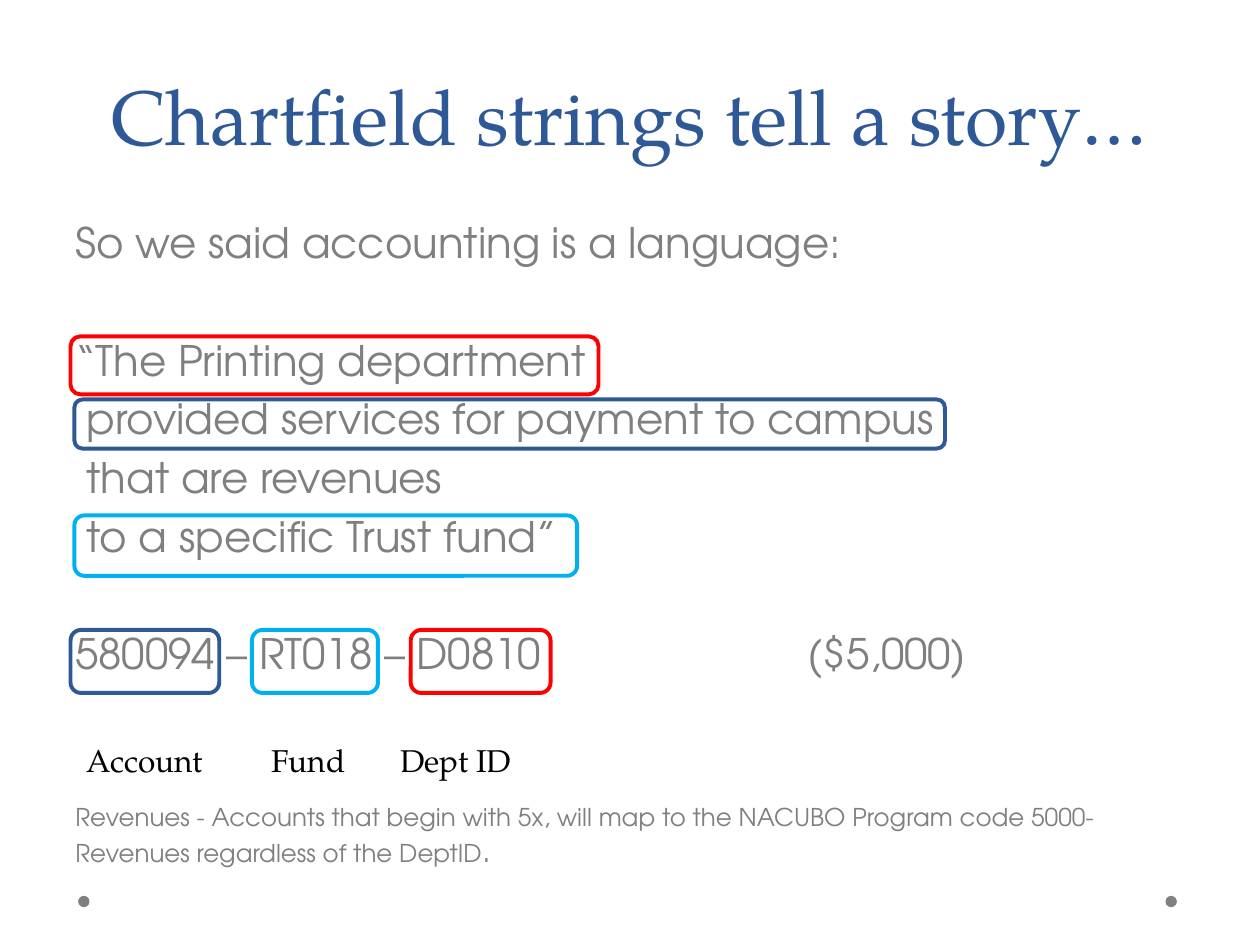
from pptx import Presentation
from pptx.dml.color import RGBColor as RGB
from pptx.enum.shapes import MSO_SHAPE as Shape
from pptx.enum.text import MSO_ANCHOR as Anchor, PP_ALIGN as Align
from pptx.oxml.ns import qn
from pptx.util import Inches, Pt
from lxml.etree import SubElement

COLORS = {"navy": "2F5897", "red": "FF0000", "sky": "00B0F0",
          "gray": "7F7F7F", "dot": "808080", "black": "000000"}
SERIF, SANS = "TeX Gyre Pagella", "TeX Gyre Adventor"
GAP = 4.8        # normal space between body lines, in points
SKIP = 38.3      # the same with one empty line
BREAK = 70.5     # the same with two empty lines


class Page:
    """Holds the slide being built and its style."""

    def __init__(self, deck):
        self.slide = deck.slides.add_slide(deck.slide_layouts[6])

    def box(self, left, top, width, height, wrap=True):
        frame = self.slide.shapes.add_textbox(
            Inches(left), Inches(top), Inches(width), Inches(height)).text_frame
        frame.word_wrap = wrap
        return frame

    def run(self, para, text, size, face, color):
        run = para.add_run()
        run.text = text
        run.font.size = Pt(size)
        run.font.name = face
        run.font.color.rgb = RGB.from_string(COLORS[color])

    def title(self, text):
        frame = self.box(0.5, 0, 9, 1.75)
        frame.vertical_anchor = Anchor.MIDDLE
        para = frame.paragraphs[0]
        para.alignment = Align.CENTER
        para.line_spacing = Pt(58)
        self.run(para, text, 44, SERIF, "navy")

    def body(self, lines):
        """Each line is (space before, indent, tab stop, runs of text and size)."""
        frame = self.box(0.5, 1.67, 9, 5.58)
        for i, (space, indent, stop, runs) in enumerate(lines):
            para = frame.add_paragraph() if i else frame.paragraphs[0]
            props = para._p.get_or_add_pPr()
            if indent:
                props.set("marL", str(Inches(indent)))
            if stop:
                tabs = SubElement(props, qn("a:tabLst"))
                SubElement(tabs, qn("a:tab"), pos=str(Inches(stop)), algn="l")
            if space:
                para.space_before = Pt(space)
            for text, size in runs:
                self.run(para, text, size, SANS, "gray")

    def label(self, text, left, width):
        para = self.box(left, 5.83, width, 0.4, wrap=False).paragraphs[0]
        self.run(para, text, 18, SERIF, "black")

    def shape(self, kind, left, top, width, height):
        shape = self.slide.shapes.add_shape(
            kind, Inches(left), Inches(top), Inches(width), Inches(height))
        shape.shadow.inherit = False
        return shape

    def dot(self, left):
        shape = self.shape(Shape.OVAL, left, 7.11, 0.09, 0.09)
        shape.fill.solid()
        shape.fill.fore_color.rgb = RGB.from_string(COLORS["dot"])
        shape.line.fill.background()

    def ring(self, color, *place):
        shape = self.shape(Shape.ROUNDED_RECTANGLE, *place)
        shape.fill.background()
        shape.line.color.rgb = RGB.from_string(COLORS[color])
        shape.line.width = Pt(2.25)


def main():
    deck = Presentation()
    deck.slide_width, deck.slide_height = Inches(10), Inches(7.5)
    page = Page(deck)

    for left in (9.25, 0.62):
        page.dot(left)
    page.title("Chartfield strings tell a story…")
    page.body([
        (0, 0, 0, [("So we said accounting is a language:", 24)]),
        (SKIP, 0, 0, [("“The Printing department", 24)]),
        (GAP, 0.09, 0, [("provided services for payment to campus", 24)]),
        (GAP, 0.09, 0, [("that are revenues", 24)]),
        (GAP, 0.09, 0, [("to a specific Trust fund”", 24)]),
        (SKIP, 0, 5.81, [("580094 – RT018 – D0810\t($5,000)", 24)]),
        (BREAK, 0, 0, [("Revenues - Accounts that begin with 5x, will map to the "
                        "NACUBO Program code 5000-Revenues regardless of the DeptID", 14),
                       (".", 18)]),
    ])

    # Matching colours tie each phrase to its part of the string.
    for ring in [("red", 0.56, 2.67, 4.19, 0.46),
                 ("navy", 0.59, 3.17, 6.91, 0.39),
                 ("sky", 0.59, 4.09, 3.99, 0.48),
                 ("red", 3.26, 5, 1.11, 0.5),
                 ("sky", 2, 5, 1, 0.5),
                 ("navy", 0.56, 5, 1.18, 0.5)]:
        page.ring(*ring)

    for text, left, width in [("Dept ID", 3.08, 1.1), ("Fund", 2.06, 0.8),
                              ("Account", 0.59, 1.14)]:
        page.label(text, left, width)

    deck.save("out.pptx")


if __name__ == "__main__":
    main()
